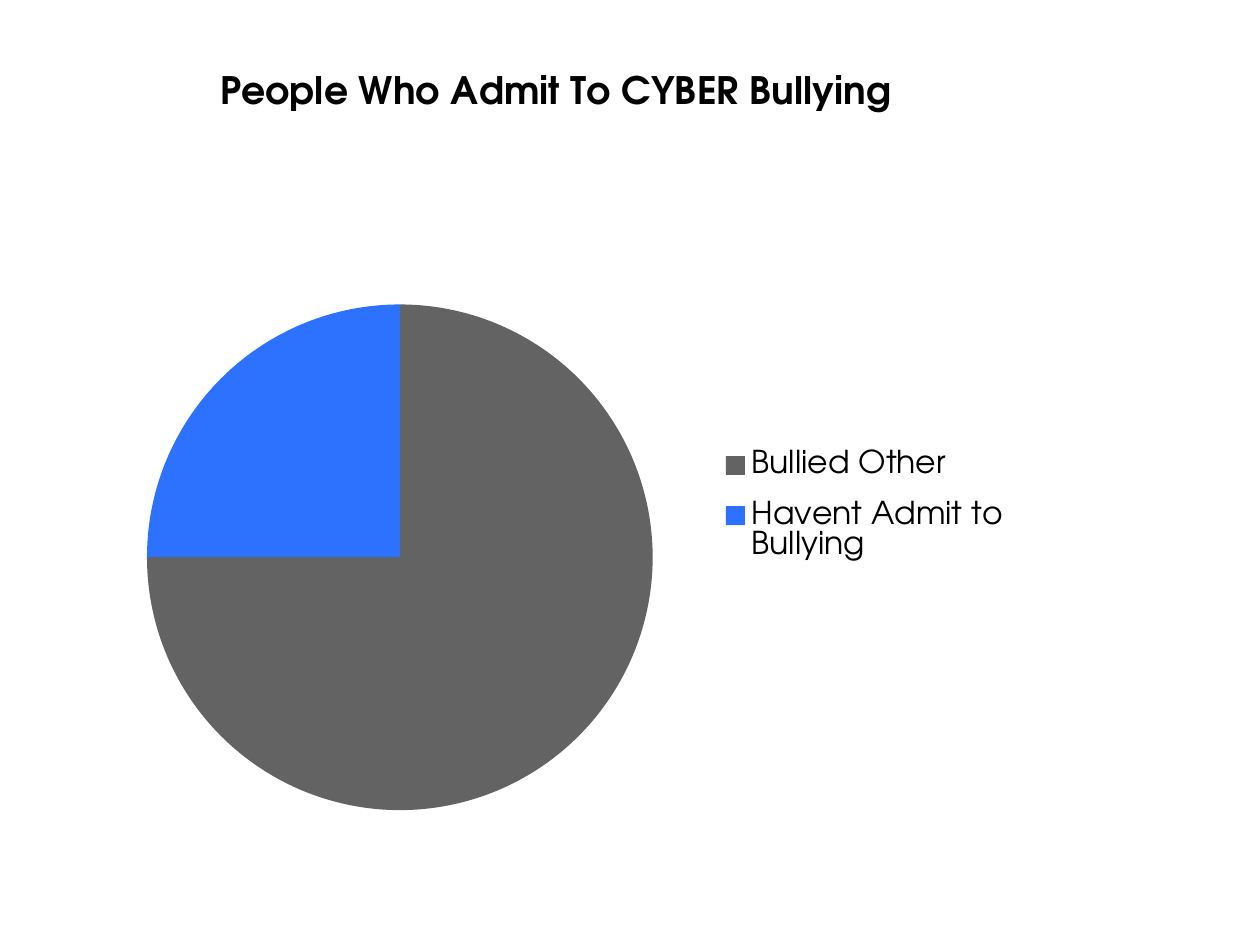
import dataclasses
import pptx
import pptx.chart.data
import pptx.dml.color
import pptx.enum.chart
import pptx.oxml
import pptx.oxml.ns
import pptx.util

Pt = pptx.util.Pt


@dataclasses.dataclass(frozen=True)
class Theme:
    """Colours, font and type sizes."""
    font: str = "TeX Gyre Adventor"
    ink: str = "000000"
    fills: tuple = ("636363", "2C71FF")
    body: float = 18
    head: float = 21.6


THEME = Theme()
FRAME = (24, 24, 588, 478)


def rgb(code):
    """Turn a hex code into a colour."""
    return pptx.dml.color.RGBColor.from_string(code)


def style(font, size, bold=False):
    """Set face, size, weight and colour of a font."""
    font.name, font.size, font.bold = THEME.font, Pt(size), bold
    font.color.rgb = rgb(THEME.ink)


def place(part, index, box, modes):
    """Fix a chart part to a box in points within the frame."""
    for old in part.findall(pptx.oxml.ns.qn("c:layout")):
        part.remove(old)
    sides = zip("xywh", box, FRAME[2:] * 2)
    marks = "".join(f'<c:{key} val="{val / full:.4f}"/>' for key, val, full in sides)
    part.insert(index, pptx.oxml.parse_xml(
        f'<c:layout {pptx.oxml.ns.nsdecls("c")}><c:manualLayout>{modes}'
        f'<c:xMode val="edge"/><c:yMode val="edge"/>{marks}'
        "</c:manualLayout></c:layout>"))


def title(chart, text):
    """Give the chart a bold title."""
    chart.has_title = True
    para = chart.chart_title.text_frame.paragraphs[0]
    para.text = text
    style(para.font, THEME.head, True)
    chart.chart_title.include_in_layout = False


def legend(chart, box):
    """Show the legend on the right."""
    chart.has_legend = True
    chart.legend.position = pptx.enum.chart.XL_LEGEND_POSITION.RIGHT
    chart.legend.include_in_layout = False
    style(chart.legend.font, THEME.body)
    place(chart.legend._element, 1, box, "")


def pie(slide, names, values, box):
    """Add a pie with one colour for each slice."""
    data = pptx.chart.data.CategoryChartData()
    data.categories = names
    data.add_series("Series 1", values)
    kind = pptx.enum.chart.XL_CHART_TYPE.PIE
    chart = slide.shapes.add_chart(kind, *map(Pt, FRAME), data).chart
    style(chart.font, THEME.body)
    plot = chart.plots[0]
    plot.vary_by_categories = True
    for index, code in enumerate(THEME.fills):
        fill = plot.series[0].points[index].format.fill
        fill.solid()
        fill.fore_color.rgb = rgb(code)
    area = plot._element.getparent()
    place(area, 0, box, '<c:layoutTarget val="inner"/>')
    return chart


def main():
    """Build and save the slide."""
    deck = pptx.Presentation()
    deck.slide_width, deck.slide_height = Pt(720), Pt(540)
    slide = deck.slides.add_slide(deck.slide_layouts[6])
    names = ("Bullied Other", "Havent Admit to Bullying")
    chart = pie(slide, names, (75, 25), (60, 150, 289, 289))
    title(chart, "People Who Admit To CYBER Bullying")
    legend(chart, (386, 222, 168, 86))
    deck.save("out.pptx")


if __name__ == "__main__":
    main()
